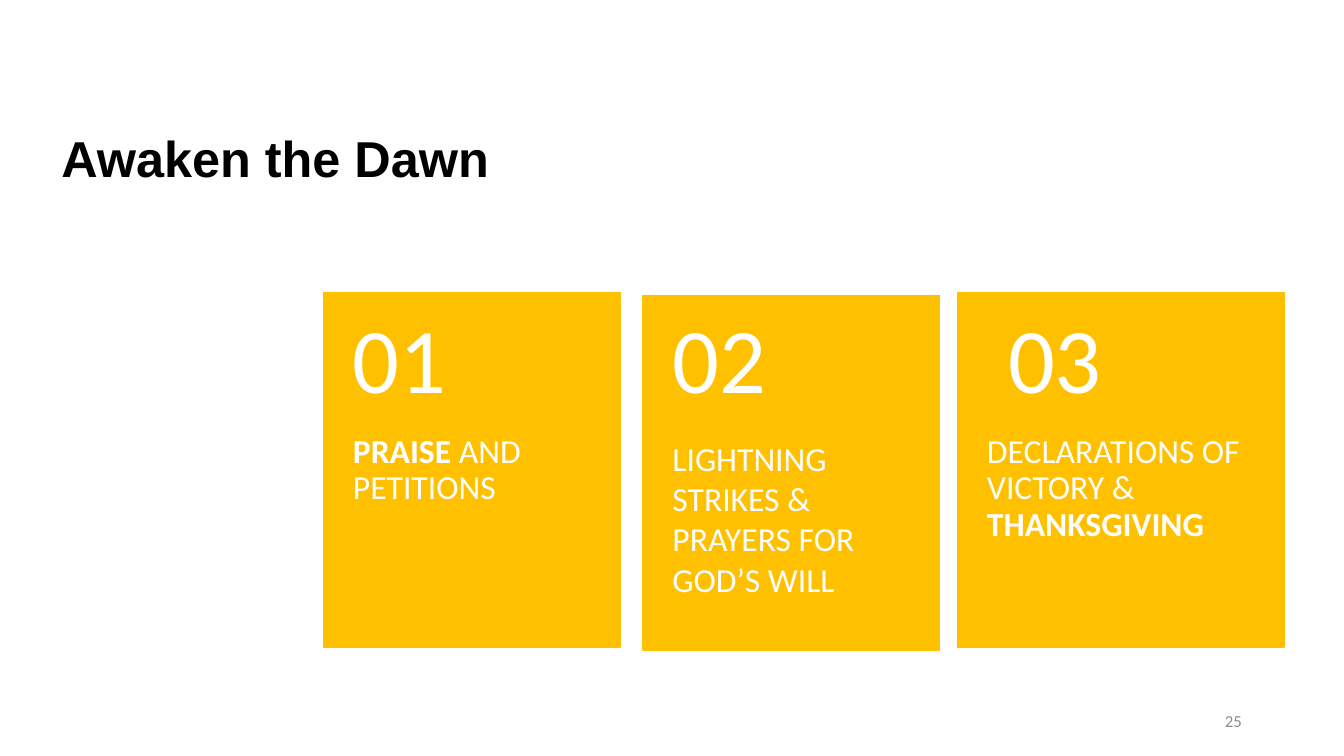
from pptx import Presentation
from pptx import util as u
from pptx.dml.color import RGBColor
from pptx.enum import shapes, text

COLORS = {"card": "FFC000", "on_card": "FFFFFF", "title": "000000", "number": "8C8C8C"}
WIDTH, HEIGHT = u.Inches(13.33), u.Inches(7.5)
COLUMNS, ROWS = 40, 30

CARD_TOP, CARD_HEIGHT = 11.6, 14.08
ORDINAL_HEIGHT = 5.64
CARD_WIDTH = 8.82

# left, drop, width, ordinal shift, line spacing, (words, bold) runs
CARDS = [
    (9.63, 0, CARD_WIDTH, 0, 0.9, [("PRAISE", True), (" AND PETITIONS", False)]),
    (19.14, 0.12, CARD_WIDTH, 0, 1.0,
     [("LIGHTNING STRIKES & PRAYERS FOR GOD’S WILL", False)]),
    (28.5, 0, 9.72, 0.63, 0.9,
     [("DECLARATIONS OF VICTORY & ", False), ("THANKSGIVING", True)]),
]


class Deck:
    """Draws on one slide; boxes are (left, top, width, height) in grid cells."""

    def __init__(self):
        self.presentation = Presentation()
        self.presentation.slide_width = WIDTH
        self.presentation.slide_height = HEIGHT
        self.slide = self.presentation.slides.add_slide(
            self.presentation.slide_layouts[5])

    def place(self, box):
        left, top, width, height = box
        return (round(left * WIDTH / COLUMNS), round(top * HEIGHT / ROWS),
                round(width * WIDTH / COLUMNS), round(height * HEIGHT / ROWS))

    def color(self, name):
        return RGBColor.from_string(COLORS[name])

    def set_text(self, shape, runs, size, color, font="Calibri", spacing=1.0,
                 anchor=text.MSO_ANCHOR.MIDDLE, align=text.PP_ALIGN.LEFT, insets=None):
        """Fill a shape with one paragraph; insets are left, top, right, bottom points."""
        frame = shape.text_frame
        frame.word_wrap = True
        frame.auto_size = text.MSO_AUTO_SIZE.NONE
        frame.vertical_anchor = anchor
        if insets:
            (frame.margin_left, frame.margin_top,
             frame.margin_right, frame.margin_bottom) = map(u.Pt, insets)
        paragraph = frame.paragraphs[0]
        paragraph.alignment = align
        paragraph.line_spacing = spacing
        paragraph.font.name = font
        paragraph.font.size = u.Pt(size)
        paragraph.font.color.rgb = self.color(color)
        for words, bold in runs:
            run = paragraph.add_run()
            run.text = words
            run.font.bold = bold

    def title(self, words, box):
        heading = self.slide.shapes.title
        heading.left, heading.top, heading.width, heading.height = self.place(box)
        self.set_text(heading, [(words, True)], 36, "title", font="Arial", spacing=0.9)

    def label(self, box, runs, size, color, parent=None, **style):
        holder = parent or self.slide
        self.set_text(holder.shapes.add_textbox(*self.place(box)),
                      runs, size, color, **style)

    def panel(self, box, parent):
        panel = parent.shapes.add_shape(shapes.MSO_SHAPE.RECTANGLE, *self.place(box))
        panel.shadow.inherit = False
        panel.fill.solid()
        panel.fill.fore_color.rgb = self.color("card")
        panel.line.color.rgb = self.color("card")
        panel.line.width = u.Pt(1)

    def card(self, group, ordinal, left, drop, width, shift, spacing, runs):
        top = CARD_TOP + drop
        self.panel((left, top, width, CARD_HEIGHT), group)
        self.label((left, top + ORDINAL_HEIGHT, width, CARD_HEIGHT - ORDINAL_HEIGHT),
                   runs, 24, "on_card", group, spacing=spacing,
                   anchor=text.MSO_ANCHOR.TOP, insets=(21, 0, 21, 26))
        self.label((left + shift, CARD_TOP, CARD_WIDTH, ORDINAL_HEIGHT),
                   [(f"{ordinal:02}", False)], 66, "on_card", group,
                   spacing=0.9, insets=(21, 13, 21, 13))


def main():
    deck = Deck()
    deck.title("Awaken the Dawn", (1.53, 4.48, 28.77, 3.8))
    steps = deck.slide.shapes.add_group_shape()
    for ordinal, step in enumerate(CARDS, start=1):
        deck.card(steps, ordinal, *step)
    deck.label((28.26, 27.8, 9, 1.6), [("25", False)], 12, "number",
               align=text.PP_ALIGN.RIGHT)
    deck.presentation.save("out.pptx")


if __name__ == "__main__":
    main()
